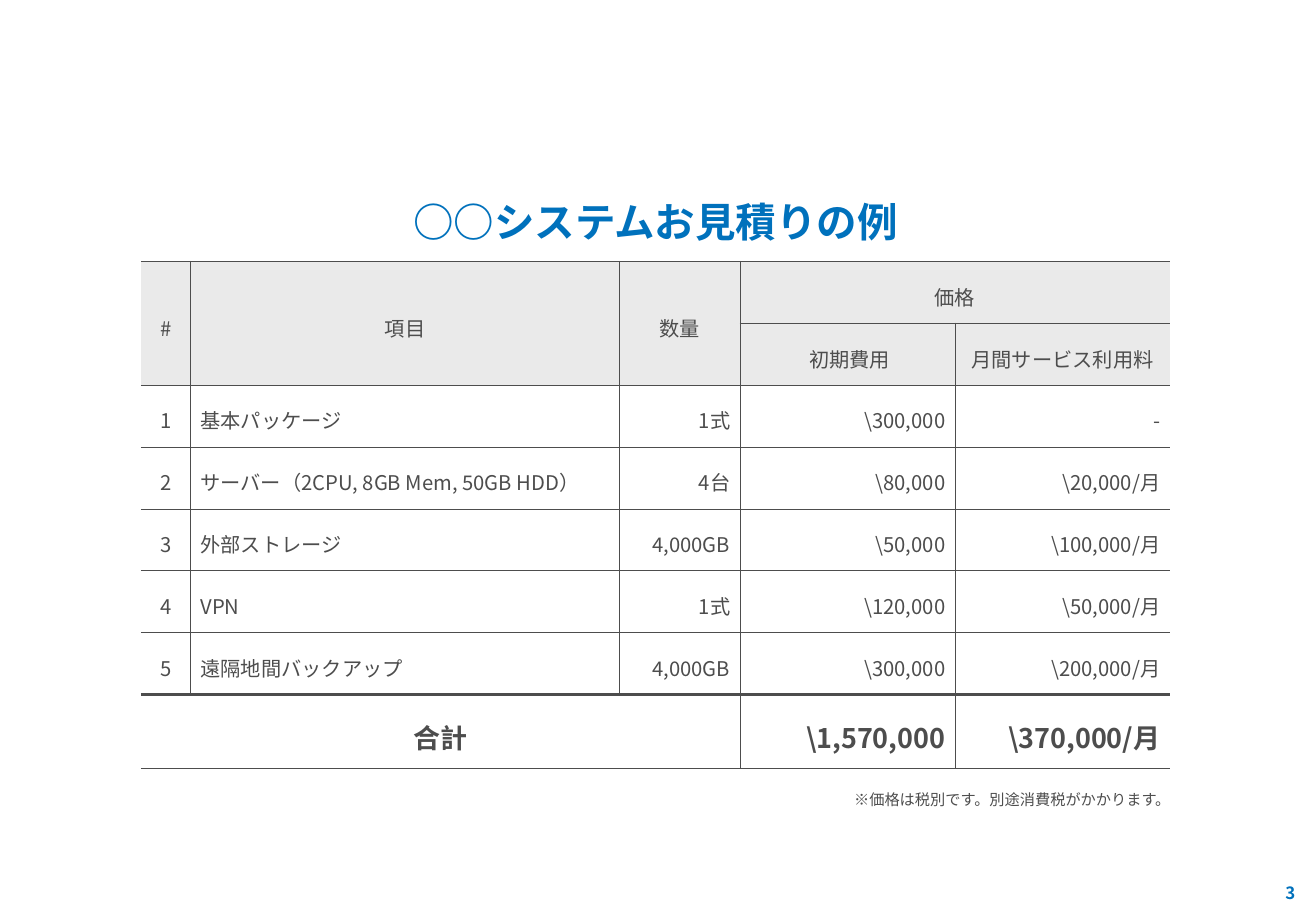
from dataclasses import dataclass

from lxml.etree import SubElement
from pptx import Presentation
from pptx.dml.color import RGBColor
from pptx.enum.text import MSO_ANCHOR, PP_ALIGN
from pptx.oxml import parse_xml
from pptx.oxml.ns import nsdecls, qn
from pptx.util import Inches, Pt


@dataclass(frozen=True)
class Theme:
    font: str = "Noto Sans CJK JP"
    accent: str = "0071BC"
    ink: str = "4D4D4D"
    header: str = "EAEAEA"
    paper: str = "FFFFFF"
    title_size: int = 24
    total_size: int = 16
    body_size: int = 12
    page_size: int = 10
    note_size: int = 9
    thin: float = 0.5
    thick: float = 2.25


THEME = Theme()
LEFT, CENTER, RIGHT = PP_ALIGN.LEFT, PP_ALIGN.CENTER, PP_ALIGN.RIGHT
NO_GRID_STYLE = "{2D5ABB26-0587-4C30-8999-92F81FD0307C}"

COLUMN_WIDTHS = [0.41, 3.53, 0.99, 1.77, 1.77]
ROW_HEIGHTS = [0.67] + [0.5] * 7 + [0.6, 0.36]
TOTAL_ROW, NOTE_ROW = 8, 9

BODY = {"size": THEME.body_size, "color": THEME.ink, "bold": False}
TOTAL = {"size": THEME.total_size, "color": THEME.ink, "bold": True}
TITLE = {"size": THEME.title_size, "color": THEME.accent, "bold": True}
NOTE = {"size": THEME.note_size, "color": THEME.ink, "bold": False}
PAGE = {"size": THEME.page_size, "color": THEME.accent, "bold": True}

CELL_MARGINS = (0.08, 0.12, 0.08, 0.1)
TITLE_MARGINS = (0, 0, 0, 0.1)
NOTE_MARGINS = (0, 0.12, 0, 0)
NO_MARGINS = (0, 0, 0, 0)

# Text, row, column, row span, column span
HEADINGS = [
    ("#", 1, 0, 2, 1),
    ("項目", 1, 1, 2, 1),
    ("数量", 1, 2, 2, 1),
    ("価格", 1, 3, 1, 2),
    (" 初期費用", 2, 3, 1, 1),
    ("月間サービス利用料", 2, 4, 1, 1),
]
ITEMS = [
    ("1", "基本パッケージ", "1式", "\\300,000", "-"),
    ("2", "サーバー（2CPU, 8GB Mem, 50GB HDD）", "4台", "\\80,000", "\\20,000/月"),
    ("3", "外部ストレージ", "4,000GB", "\\50,000", "\\100,000/月"),
    ("4", "VPN", "1式", "\\120,000", "\\50,000/月"),
    ("5", "遠隔地間バックアップ", "4,000GB", "\\300,000", "\\200,000/月"),
]
ITEM_ALIGNMENTS = [CENTER, LEFT, RIGHT, RIGHT, RIGHT]


def set_attributes(target, values):
    for name, value in values.items():
        setattr(target, name, value)


def write_text(text_frame, text, style, alignment, line_spacing=1.0):
    paragraph = text_frame.paragraphs[0]
    set_attributes(paragraph, {"alignment": alignment, "line_spacing": line_spacing})
    run = paragraph.add_run()
    run.text = text
    set_attributes(run.font, {
        "name": THEME.font, "size": Pt(style["size"]), "bold": style["bold"],
    })
    run.font.color.rgb = RGBColor.from_string(style["color"])
    properties = run.font.latin if hasattr(run.font, "latin") else run._r.get_or_add_rPr()
    SubElement(properties, qn("a:ea")).set("typeface", THEME.font)


def set_margins(target, margins):
    sides = ("margin_left", "margin_top", "margin_right", "margin_bottom")
    set_attributes(target, dict(zip(sides, map(Inches, margins))))


def horizontal_rule(boundary):
    """Width of the rule above the row with this index; zero means no rule."""
    if boundary in (0, len(ROW_HEIGHTS)):
        return 0
    return THEME.thick if boundary == TOTAL_ROW else THEME.thin


def set_borders(cell, row, column, row_span, column_span):
    widths = {
        "lnL": THEME.thin if column > 0 else 0,
        "lnR": THEME.thin if column + column_span < len(COLUMN_WIDTHS) else 0,
        "lnT": horizontal_rule(row),
        "lnB": horizontal_rule(row + row_span),
    }
    properties = cell._tc.get_or_add_tcPr()
    for index, (side, width) in enumerate(widths.items()):
        paint = (f'<a:solidFill><a:srgbClr val="{THEME.ink}"/></a:solidFill>'
                 if width else "<a:noFill/>")
        properties.insert(index, parse_xml(
            f'<a:{side} {nsdecls("a")} w="{Pt(width)}">{paint}</a:{side}>'))


def fill_cell(table, text, row, column, row_span=1, column_span=1, style=BODY,
              alignment=CENTER, fill=THEME.paper, margins=CELL_MARGINS):
    cell = table.cell(row, column)
    if row_span > 1 or column_span > 1:
        cell.merge(table.cell(row + row_span - 1, column + column_span - 1))
    cell.fill.solid()
    cell.fill.fore_color.rgb = RGBColor.from_string(fill)
    cell.vertical_anchor = MSO_ANCHOR.MIDDLE
    set_margins(cell, margins)
    write_text(cell.text_frame, text, style, alignment, 1.2)
    set_borders(cell, row, column, row_span, column_span)


def add_plain_table(slide):
    frame = slide.shapes.add_table(
        len(ROW_HEIGHTS), len(COLUMN_WIDTHS), Inches(1.16), Inches(1.47),
        Inches(sum(COLUMN_WIDTHS)), Inches(sum(ROW_HEIGHTS)))
    table = frame.table
    set_attributes(table, {"first_row": False, "horz_banding": False})
    for style_id in frame.element.iter(qn("a:tableStyleId")):
        style_id.text = NO_GRID_STYLE
    for column, width in zip(table.columns, COLUMN_WIDTHS):
        column.width = Inches(width)
    for row, height in zip(table.rows, ROW_HEIGHTS):
        row.height = Inches(height)
    return table


def add_estimate(slide):
    table = add_plain_table(slide)
    fill_cell(table, "○○システムお見積りの例", 0, 0, column_span=5,
              style=TITLE, margins=TITLE_MARGINS)
    for heading in HEADINGS:
        fill_cell(table, *heading, fill=THEME.header)
    for row, item in enumerate(ITEMS, start=3):
        for column, (text, alignment) in enumerate(zip(item, ITEM_ALIGNMENTS)):
            fill_cell(table, text, row, column, alignment=alignment)
    fill_cell(table, "合計", TOTAL_ROW, 0, column_span=3, style=TOTAL)
    for column, text in enumerate(("\\1,570,000", "\\370,000/月"), start=3):
        fill_cell(table, text, TOTAL_ROW, column, style=TOTAL, alignment=RIGHT)
    fill_cell(table, "※価格は税別です。別途消費税がかかります。", NOTE_ROW, 0,
              column_span=5, style=NOTE, alignment=RIGHT, margins=NOTE_MARGINS)


def add_page_number(slide, number):
    box = slide.shapes.add_textbox(Inches(8.13), Inches(7.21), Inches(2.53), Inches(0.28))
    text_frame = box.text_frame
    set_attributes(text_frame, {"word_wrap": True, "vertical_anchor": MSO_ANCHOR.MIDDLE})
    set_margins(text_frame, NO_MARGINS)
    write_text(text_frame, number, PAGE, RIGHT)


def main():
    presentation = Presentation()
    set_attributes(presentation, {
        "slide_width": Inches(10.83), "slide_height": Inches(7.5),
    })
    slide = presentation.slides.add_slide(presentation.slide_layouts[6])
    add_estimate(slide)
    add_page_number(slide, "3")
    presentation.save("out.pptx")


if __name__ == "__main__":
    main()
